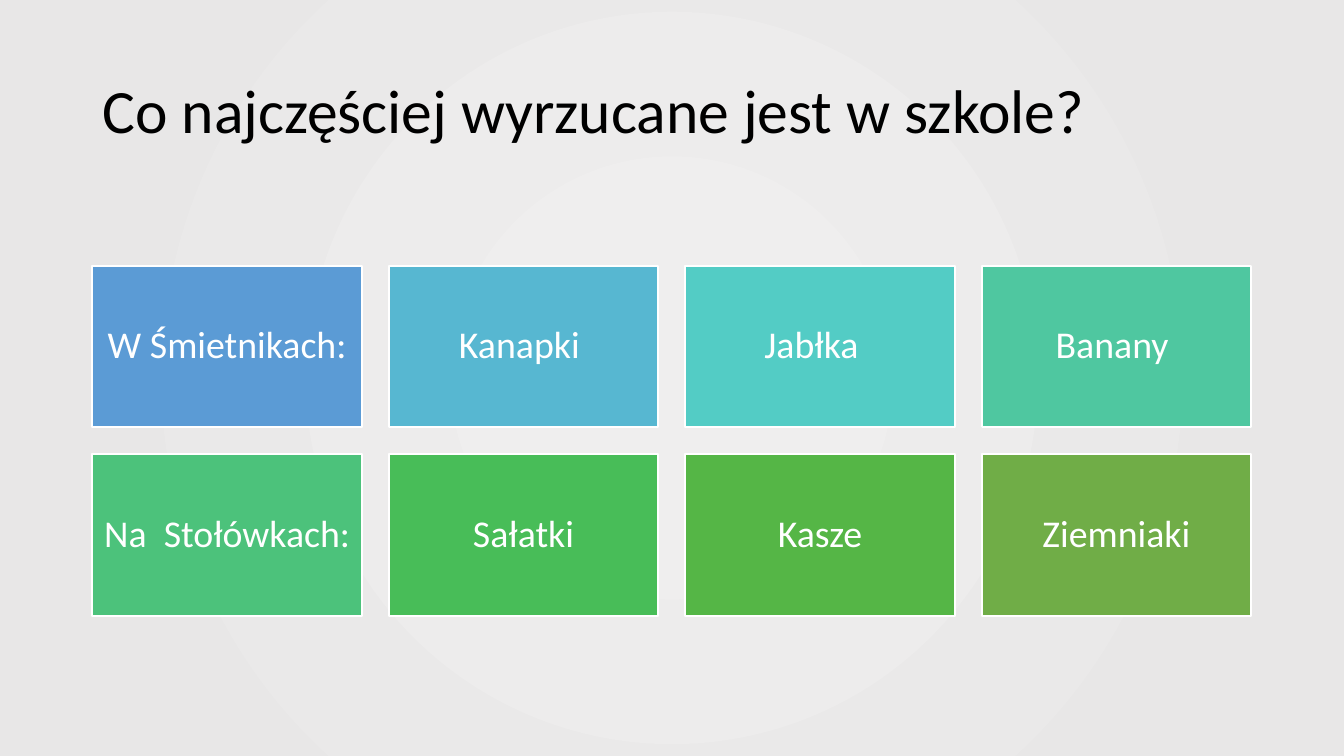
from lxml import etree
from pptx import Presentation
from pptx.dml.color import RGBColor
from pptx.enum.shapes import MSO_SHAPE
from pptx.enum.text import MSO_ANCHOR, MSO_AUTO_SIZE, PP_ALIGN
from pptx.oxml import parse_xml
from pptx.oxml.ns import nsdecls, qn
from pptx.util import Cm, Pt

RECTANGLE = MSO_SHAPE.RECTANGLE
MIDDLE = MSO_ANCHOR.MIDDLE
NO_AUTOFIT = MSO_AUTO_SIZE.NONE
LEFT, CENTER = PP_ALIGN.LEFT, PP_ALIGN.CENTER

BLACK = RGBColor(0x00, 0x00, 0x00)
WHITE = RGBColor(0xFF, 0xFF, 0xFF)
BLUE = RGBColor(0x5B, 0x9B, 0xD5)
SKY = RGBColor(0x57, 0xB7, 0xD1)
TURQUOISE = RGBColor(0x53, 0xCC, 0xC5)
MINT = RGBColor(0x4F, 0xC7, 0xA0)
JADE = RGBColor(0x4C, 0xC2, 0x7B)
GREEN = RGBColor(0x48, 0xBD, 0x58)
LEAF = RGBColor(0x55, 0xB6, 0x46)
OLIVE = RGBColor(0x70, 0xAD, 0x47)
GLOW_CENTRE = RGBColor(0xEF, 0xEE, 0xEE)
GLOW_EDGE = RGBColor(0xE8, 0xE7, 0xE7)

SLIDE_WIDTH, SLIDE_HEIGHT = 33.87, 19.05
TILE_WIDTH, TILE_HEIGHT, TILE_GAP = 6.79, 4.07, 0.68
TILES_LEFT, TILES_TOP = 2.33, 6.7

WASTE_ROWS = [
    [("W Śmietnikach:", BLUE), ("Kanapki ", SKY),
     ("Jabłka  ", TURQUOISE), ("Banany ", MINT)],
    [("Na  Stołówkach:", JADE), ("Sałatki", GREEN),
     ("Kasze", LEAF), ("Ziemniaki", OLIVE)],
]


class SlideBuilder:
    font = "Calibri"
    title_size = Pt(44)
    tile_size = Pt(27)
    tile_inset = Cm(0.27)

    def __init__(self, slide):
        self.slide = slide

    def set_text(self, frame, text, size, color, align):
        frame.text = text
        frame.word_wrap = True
        frame.auto_size = NO_AUTOFIT
        frame.vertical_anchor = MIDDLE
        paragraph = frame.paragraphs[0]
        paragraph.alignment = align
        paragraph.line_spacing = 0.9
        font = paragraph.runs[0].font
        font.name, font.size, font.color.rgb = self.font, size, color

    def rectangle(self, left, top, width, height):
        shape = self.slide.shapes.add_shape(
            RECTANGLE, Cm(left), Cm(top), Cm(width), Cm(height))
        shape.shadow.inherit = False
        return shape

    def backdrop(self, centre, edge):
        """Cover the slide with a radial gradient, behind everything else."""
        glow = self.rectangle(0, 0, SLIDE_WIDTH, SLIDE_HEIGHT)
        glow.line.fill.background()
        glow.fill.gradient()
        gradient = glow._element.spPr.find(qn("a:gradFill"))
        for child in list(gradient):
            gradient.remove(child)
        stops = etree.SubElement(gradient, qn("a:gsLst"))
        for position, color in ((10000, centre), (85000, edge)):
            stop = etree.SubElement(stops, qn("a:gs"), pos=str(position))
            etree.SubElement(stop, qn("a:srgbClr"), val=str(color))
        gradient.append(parse_xml(
            f'<a:path {nsdecls("a")} path="circle">'
            '<a:fillToRect l="50000" t="50000" r="50000" b="50000"/></a:path>'))
        self.slide.shapes._spTree.insert(2, glow._element)

    def title(self, text, left, top, width, height):
        heading = self.slide.shapes.title
        heading.left, heading.top = Cm(left), Cm(top)
        heading.width, heading.height = Cm(width), Cm(height)
        self.set_text(heading.text_frame, text, self.title_size, BLACK, LEFT)

    def tile(self, text, color, left, top):
        tile = self.rectangle(left, top, TILE_WIDTH, TILE_HEIGHT)
        tile.fill.solid()
        tile.fill.fore_color.rgb = color
        tile.line.color.rgb = WHITE
        tile.line.width = Pt(1.5)
        frame = tile.text_frame
        frame.margin_left = frame.margin_right = self.tile_inset
        frame.margin_top = frame.margin_bottom = self.tile_inset
        self.set_text(frame, text, self.tile_size, WHITE, CENTER)


def main():
    deck = Presentation()
    deck.slide_width, deck.slide_height = Cm(SLIDE_WIDTH), Cm(SLIDE_HEIGHT)
    builder = SlideBuilder(deck.slides.add_slide(deck.slide_layouts[5]))

    builder.backdrop(GLOW_CENTRE, GLOW_EDGE)
    builder.title("Co najczęściej wyrzucane jest w szkole?",
                  TILES_LEFT, 1.01, 29.21, 3.68)
    for row, foods in enumerate(WASTE_ROWS):
        for column, (food, color) in enumerate(foods):
            builder.tile(food, color,
                         TILES_LEFT + column * (TILE_WIDTH + TILE_GAP),
                         TILES_TOP + row * (TILE_HEIGHT + TILE_GAP))

    deck.save("out.pptx")


if __name__ == "__main__":
    main()
